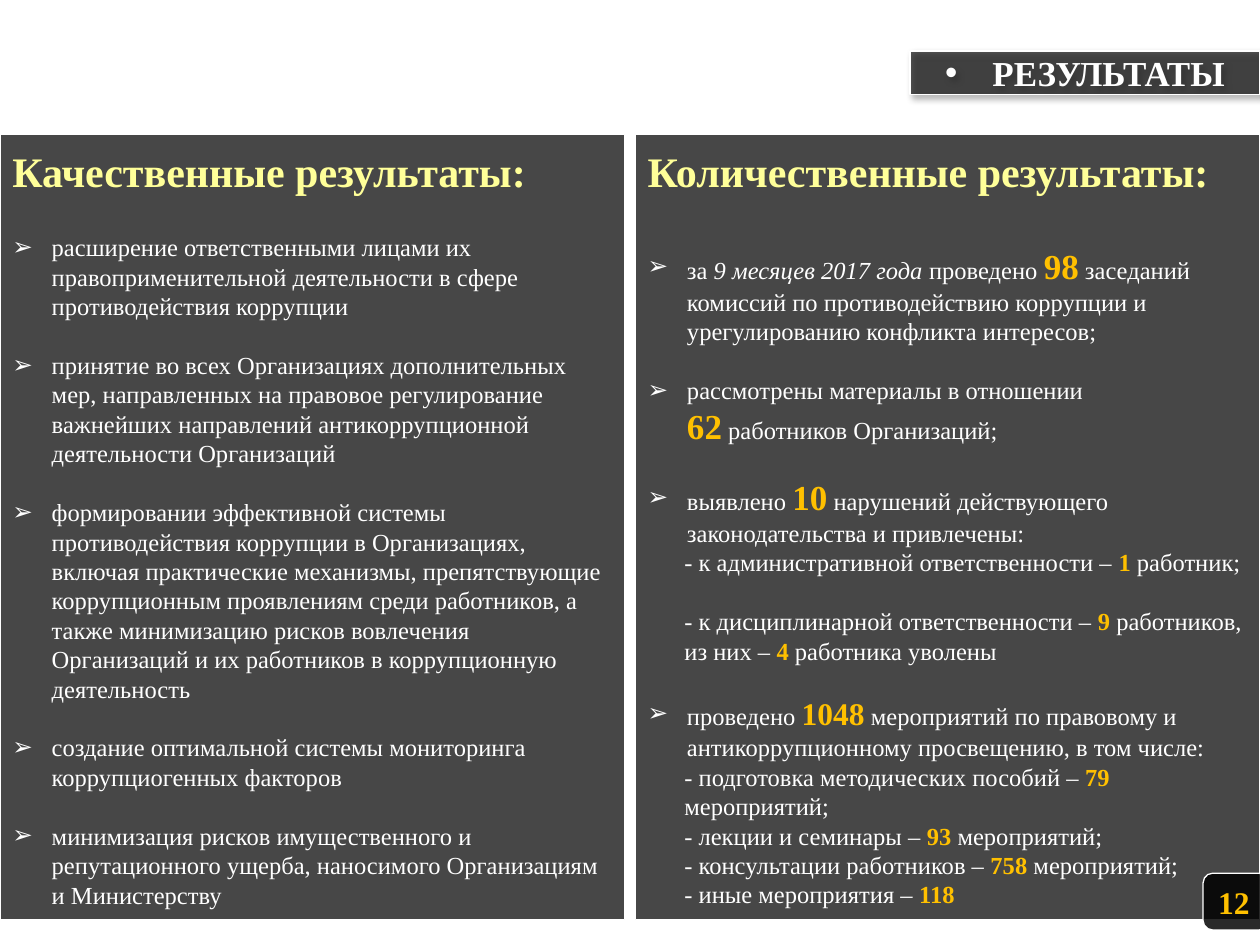
from lxml import etree
from pptx import Presentation
from pptx.dml.color import RGBColor
from pptx.enum.shapes import MSO_SHAPE
from pptx.enum.text import MSO_ANCHOR, MSO_AUTO_SIZE, PP_ALIGN
from pptx.oxml.ns import qn
from pptx.util import Pt

RECTANGLE, ROUNDED = MSO_SHAPE.RECTANGLE, MSO_SHAPE.ROUNDED_RECTANGLE
MIDDLE, NO_AUTOFIT = MSO_ANCHOR.MIDDLE, MSO_AUTO_SIZE.NONE
LEFT, CENTER = PP_ALIGN.LEFT, PP_ALIGN.CENTER
BLACK = RGBColor(0x00, 0x00, 0x00)
WHITE = RGBColor(0xFF, 0xFF, 0xFF)
YELLOW = RGBColor(0xFF, 0xFF, 0x99)
GOLD = RGBColor(0xFF, 0xC0, 0x00)
FONT = "Times New Roman"
BODY_SIZE = 14
LINE_GAP = 16.8

TITLE = "РЕЗУЛЬТАТЫ"
PAGE_NUMBER = "12"
PLAIN = {}
ITALIC = {"italic": True}


def figure(size=BODY_SIZE):
    return {"size": Pt(size), "bold": True, "color": GOLD}


QUALITY = [
    ("arrow", 21, [("расширение ответственными лицами их правоприменительной деятельности в сфере противодействия коррупции", PLAIN)]),
    ("arrow", LINE_GAP, [("принятие во всех Организациях дополнительных мер, направленных на правовое регулирование важнейших направлений антикоррупционной деятельности Организаций", PLAIN)]),
    ("arrow", LINE_GAP, [("формировании эффективной системы противодействия коррупции в Организациях, включая практические механизмы, препятствующие коррупционным проявлениям среди работников, а также минимизацию рисков вовлечения Организаций и их работников в коррупционную деятельность", PLAIN)]),
    ("arrow", LINE_GAP, [("создание оптимальной системы мониторинга коррупциогенных факторов", PLAIN)]),
    ("arrow", LINE_GAP, [("минимизация рисков имущественного и репутационного ущерба, наносимого Организациям и Министерству", PLAIN)]),
]
QUANTITY = [
    ("arrow", 28, [("за ", PLAIN), ("9 месяцев 2017 года ", ITALIC), ("проведено ", PLAIN), ("98", figure(20)),
                   (" заседаний комиссий по противодействию коррупции и урегулированию конфликта интересов;", PLAIN)]),
    ("arrow", LINE_GAP, [("рассмотрены материалы в отношении", PLAIN), ("\n", PLAIN), ("62", figure(20)),
                         (" работников Организаций;", PLAIN)]),
    ("arrow", LINE_GAP, [("выявлено ", PLAIN), ("10", figure(20)),
                         (" нарушений действующего законодательства и привлечены:", PLAIN)]),
    ("detail", 0, [("- к административной ответственности – ", PLAIN), ("1", figure()), (" работник;", PLAIN)]),
    ("detail", LINE_GAP, [("- к дисциплинарной ответственности – ", PLAIN), ("9", figure()),
                          (" работников, из них – ", PLAIN), ("4", figure()), (" работника уволены", PLAIN)]),
    ("arrow", LINE_GAP, [("проведено ", PLAIN), ("1048", figure(18)),
                         (" мероприятий по правовому и антикоррупционному просвещению, в том числе:", PLAIN)]),
    ("detail", 0, [("- подготовка методических пособий – ", PLAIN), ("79", figure()), (" мероприятий;", PLAIN)]),
    ("detail", 0, [("- лекции и семинары – ", PLAIN), ("93 ", figure()), ("мероприятий;", PLAIN)]),
    ("detail", 0, [("- консультации работников – ", PLAIN), ("758 ", figure()), ("мероприятий;", PLAIN)]),
    ("detail", 0, [("- иные мероприятия – ", PLAIN), ("118", figure())]),
]
PANELS = [("Качественные результаты:", QUALITY), ("Количественные результаты:", QUANTITY)]

SLIDE_WIDTH, SLIDE_HEIGHT = 720, 540
PANEL_TOP, PANEL_WIDTH, PANEL_HEIGHT = 77, 357, 448.5


def style_font(font, size=Pt(BODY_SIZE), bold=False, italic=False, color=WHITE):
    font.name, font.size, font.bold, font.italic = FONT, size, bold, italic
    font.color.rgb = color


def paint(box, opacity, line_width):
    box.fill.solid()
    box.fill.fore_color.rgb = BLACK
    color = box.fill._xPr.find(f".//{qn('a:srgbClr')}")
    etree.SubElement(color, qn("a:alpha"), val=str(opacity * 1000))
    box.line.color.rgb = WHITE
    box.line.width = Pt(line_width)


def add_box(slide, preset, left, top, width, height, opacity):
    box = slide.shapes.add_shape(preset, Pt(left), Pt(top), Pt(width), Pt(height))
    box.shadow.inherit = False
    paint(box, opacity, 0.75)
    box.text_frame.word_wrap = True
    box.text_frame.vertical_anchor = MIDDLE
    return box.text_frame


def set_indent(paragraph, margin, hanging=0, bullet=None):
    properties = paragraph._p.get_or_add_pPr()
    properties.set("marL", str(Pt(margin)))
    properties.set("indent", str(-Pt(hanging)))
    if bullet:
        etree.SubElement(properties, qn("a:buFont"), typeface="Arial")
        etree.SubElement(properties, qn("a:buChar"), char=bullet)


def add_item(frame, kind, gap, runs):
    paragraph = frame.add_paragraph()
    if kind == "arrow":
        set_indent(paragraph, 22.5, 22.5, "➢")
    else:
        set_indent(paragraph, 21)
    paragraph.alignment = LEFT
    paragraph.space_before = Pt(gap)
    style_font(paragraph.font)
    for text, style in runs:
        if text == "\n":
            paragraph.add_line_break()
            continue
        run = paragraph.add_run()
        run.text = text
        if len(runs) > 1:
            style_font(run.font, **style)


def set_heading(frame, text, size, color, alignment=LEFT):
    paragraph = frame.paragraphs[0]
    paragraph.text = text
    paragraph.alignment = alignment
    style_font(paragraph.font, Pt(size), True, color=color)


def place_title(slide):
    title = slide.shapes.title
    title.left, title.top, title.width, title.height = Pt(520), Pt(29), Pt(200), Pt(25)
    paint(title, 66, 1)
    effects = etree.SubElement(title._element.spPr, qn("a:effectLst"))
    shadow = etree.SubElement(effects, qn("a:outerShdw"), blurRad=str(Pt(4)), dist=str(Pt(3)),
                              dir=str(45 * 60000), algn="tl", rotWithShape="0")
    color = etree.SubElement(shadow, qn("a:srgbClr"), val=str(BLACK))
    etree.SubElement(color, qn("a:alpha"), val="40000")
    frame = title.text_frame
    frame.margin_left = frame.margin_top = frame.margin_right = frame.margin_bottom = 0
    frame.auto_size, frame.vertical_anchor, frame.word_wrap = NO_AUTOFIT, MIDDLE, True
    set_indent(frame.paragraphs[0], 27, 27, "•")
    set_heading(frame, TITLE, 20, WHITE, CENTER)


def main():
    deck = Presentation()
    deck.slide_width, deck.slide_height = Pt(SLIDE_WIDTH), Pt(SLIDE_HEIGHT)
    slide = deck.slides.add_slide(deck.slide_layouts[5])
    place_title(slide)
    for column, (heading, items) in enumerate(PANELS):
        left = column * (SLIDE_WIDTH - PANEL_WIDTH)
        frame = add_box(slide, RECTANGLE, left, PANEL_TOP, PANEL_WIDTH, PANEL_HEIGHT, 72)
        set_heading(frame, heading, 24, YELLOW)
        for kind, gap, runs in items:
            add_item(frame, kind, gap, runs)
    set_heading(add_box(slide, ROUNDED, 687.5, 499, 37.5, 32.4, 84), PAGE_NUMBER, 18, GOLD)
    deck.save("out.pptx")


if __name__ == "__main__":
    main()
